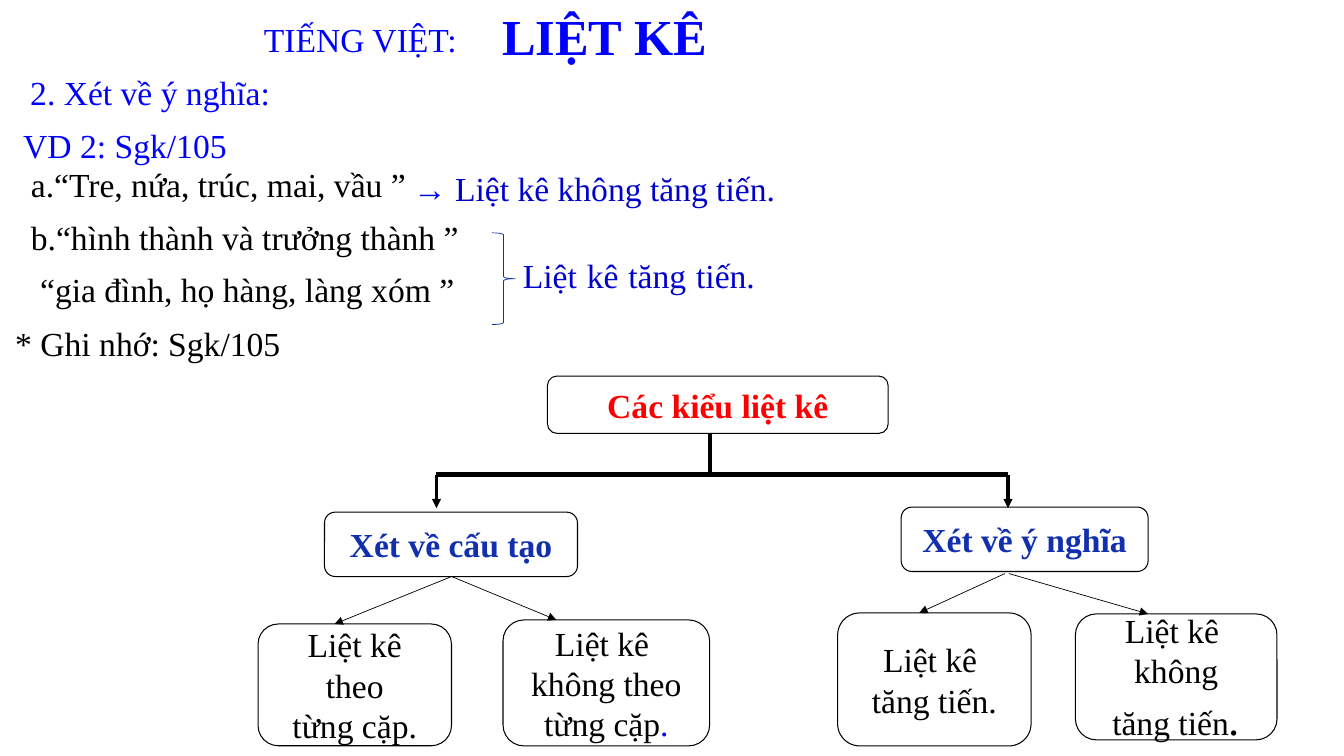
from dataclasses import dataclass

from lxml.etree import SubElement
from pptx import Presentation
from pptx.dml.color import RGBColor
from pptx.enum.shapes import MSO_CONNECTOR as Connector, MSO_SHAPE as Preset
from pptx.enum.text import MSO_ANCHOR as Anchor, MSO_AUTO_SIZE as AutoSize, PP_ALIGN as Align
from pptx.oxml.ns import qn
from pptx.util import Pt


@dataclass(frozen=True)
class Theme:
    font: str = "Times New Roman"
    blue: str = "0000FF"
    answer: str = "0000CC"
    navy: str = "1230AE"
    red: str = "FF0000"
    black: str = "000000"
    gap: int = 18
    body: int = 24
    stop: int = 32
    title: int = 36
    hair: float = 0.5
    outline: float = 0.75
    arrow: float = 2.25
    trunk: float = 3


theme = Theme()

# ---- Content: a run is (text, size, colour, bold); a box is (left, top, width, height)


def body(text, color=theme.black, bold=False):
    return (text, theme.body, color, bold)


lead = (" ", theme.gap, theme.blue, True)

title_box = (347, 0, 167, 51)
title_runs = [lead, ("LIỆT KÊ", theme.title, theme.blue, True)]

# Headings hug their text; examples wrap and are justified
headings = [
    ((177, 10, 158.4, 36), [lead, body("TIẾNG VIỆT:", theme.blue)]),
    ((10, 47.5, 198.7, 36), [lead, body("2. Xét về ý nghĩa:", theme.blue)]),
    ((5, 85.7, 165.6, 36), [lead, body("VD 2: Sgk/105", theme.blue)]),
    ((-0.7, 226.8, 210, 36), [lead, body("* Ghi nhớ: Sgk/105")]),
]
examples = [
    ((15, 113.8, 354, 36), [body("a.“Tre, nứa, trúc, mai, vầu ” ")]),
    ((288, 116.6, 345, 36), [body("→ ", theme.blue),
                             body("Liệt kê không tăng tiến. ", theme.answer)]),
    ((15, 151.2, 354, 36), [body("b.“hình thành và trưởng thành ” ")]),
    ((359.3, 178.6, 187.2, 36), [body(" ", theme.blue),
                                 body("Liệt kê tăng tiến. ", theme.answer)]),
    ((21.6, 188.6, 354, 36), [body("“gia đình, họ hàng, làng xóm ” ")]),
]
brace_box = (351.4, 166.3, 16.6, 65.5)

root = ((391, 268.6, 243.4, 41), [[body("Các kiểu liệt kê", theme.red, True)]])
trunk_x, trunk_top, bar_y, drop_y = 507, 309, 339, 363

# Each branch: box, label, x of its drop arrow, and leaves as
# (box, paragraphs, start of the arrow, x of the arrow tip)
branches = [
    ((231.8, 365.8, 180.7, 46), "Xét về cấu tạo", 311.8, [
        ((184.3, 445.7, 138.2, 87),
         [[body("Liệt kê")], [body(" theo ")], [body("từng cặp.")]],
         (322.6, 411.8), 239),
        ((359.3, 442.8, 147.6, 90),
         [[body("Liệt kê ")], [body("không theo")],
          [body("từng cặp"), body(".", theme.blue)]],
         (322.6, 411.8), 397.4),
    ]),
    ((643.7, 362.2, 176.4, 46), "Xét về ý nghĩa", 720, [
        ((598.3, 437.8, 138.2, 95),
         [[body("Liệt kê ")], [body("tăng tiến.")]],
         (717.8, 409.7), 656.6),
        ((768.2, 438.5, 144, 90),
         [[body("Liệt kê ")], [body("không")],
          [body("tăng tiến"), (".", theme.stop, theme.black, False)]],
         (720.7, 409.7), 820),
    ]),
]

# ---- Drawing helpers
presentation = Presentation()
presentation.slide_width, presentation.slide_height = Pt(960), Pt(540)
slide = presentation.slides.add_slide(presentation.slide_layouts[5])
shapes = slide.shapes


def points(*values):
    return [Pt(value) for value in values]


def write(frame, paragraphs, align):
    for index, runs in enumerate(paragraphs):
        paragraph = frame.add_paragraph() if index else frame.paragraphs[0]
        paragraph.alignment = align
        for text, size, color, bold in runs:
            run = paragraph.add_run()
            run.text = text
            font = run.font
            font.name, font.size, font.bold = theme.font, Pt(size), bold
            font.color.rgb = RGBColor.from_string(color)


def add_text(box, runs, wrap, align):
    frame = shapes.add_textbox(*points(*box)).text_frame
    frame.word_wrap = wrap
    frame.auto_size = AutoSize.SHAPE_TO_FIT_TEXT
    write(frame, [runs], align)


def add_outline(preset, box, color, width):
    shape = shapes.add_shape(preset, *points(*box))
    shape.shadow.inherit = False
    shape.fill.background()
    shape.line.color.rgb = RGBColor.from_string(color)
    shape.line.width = Pt(width)
    return shape


def add_node(box, paragraphs):
    shape = add_outline(Preset.FLOWCHART_ALTERNATE_PROCESS, box, theme.black, theme.outline)
    frame = shape.text_frame
    frame.word_wrap = False
    frame.vertical_anchor = Anchor.MIDDLE
    write(frame, paragraphs, Align.CENTER)


def add_line(start, end, width, arrow=False):
    line = shapes.add_connector(Connector.STRAIGHT, *points(*start, *end))
    line.line.color.rgb = RGBColor.from_string(theme.black)
    line.line.width = Pt(width)
    if arrow:
        SubElement(line.line._get_or_add_ln(), qn("a:tailEnd"), type="triangle")
    SubElement(line._element.spPr, qn("a:effectLst"))


# ---- Title
title = shapes.title
title.left, title.top, title.width, title.height = points(*title_box)
title.text_frame.word_wrap = False
title.text_frame.auto_size = AutoSize.NONE
title.text_frame.vertical_anchor = Anchor.TOP
write(title.text_frame, [title_runs], Align.LEFT)

# ---- Lesson text
for box, runs in headings:
    add_text(box, runs, False, Align.LEFT)
for box, runs in examples:
    add_text(box, runs, True, Align.JUSTIFY)
add_outline(Preset.RIGHT_BRACE, brace_box, theme.navy, theme.hair)

# ---- Tree: root and trunk
add_node(*root)
drops = [drop_x for _, _, drop_x, _ in branches]
add_line((trunk_x, trunk_top), (trunk_x, bar_y), theme.trunk)
add_line((drops[0], bar_y), (drops[-1], bar_y), theme.trunk)

# ---- Tree: branches and leaves
for branch_box, label, drop_x, leaves in branches:
    add_line((drop_x, bar_y), (drop_x, drop_y), theme.arrow, arrow=True)
    add_node(branch_box, [[body(label, theme.navy, True)]])
    for leaf_box, paragraphs, start, tip_x in leaves:
        add_line(start, (tip_x, leaf_box[1]), theme.hair, arrow=True)
        add_node(leaf_box, paragraphs)

presentation.save("out.pptx")
